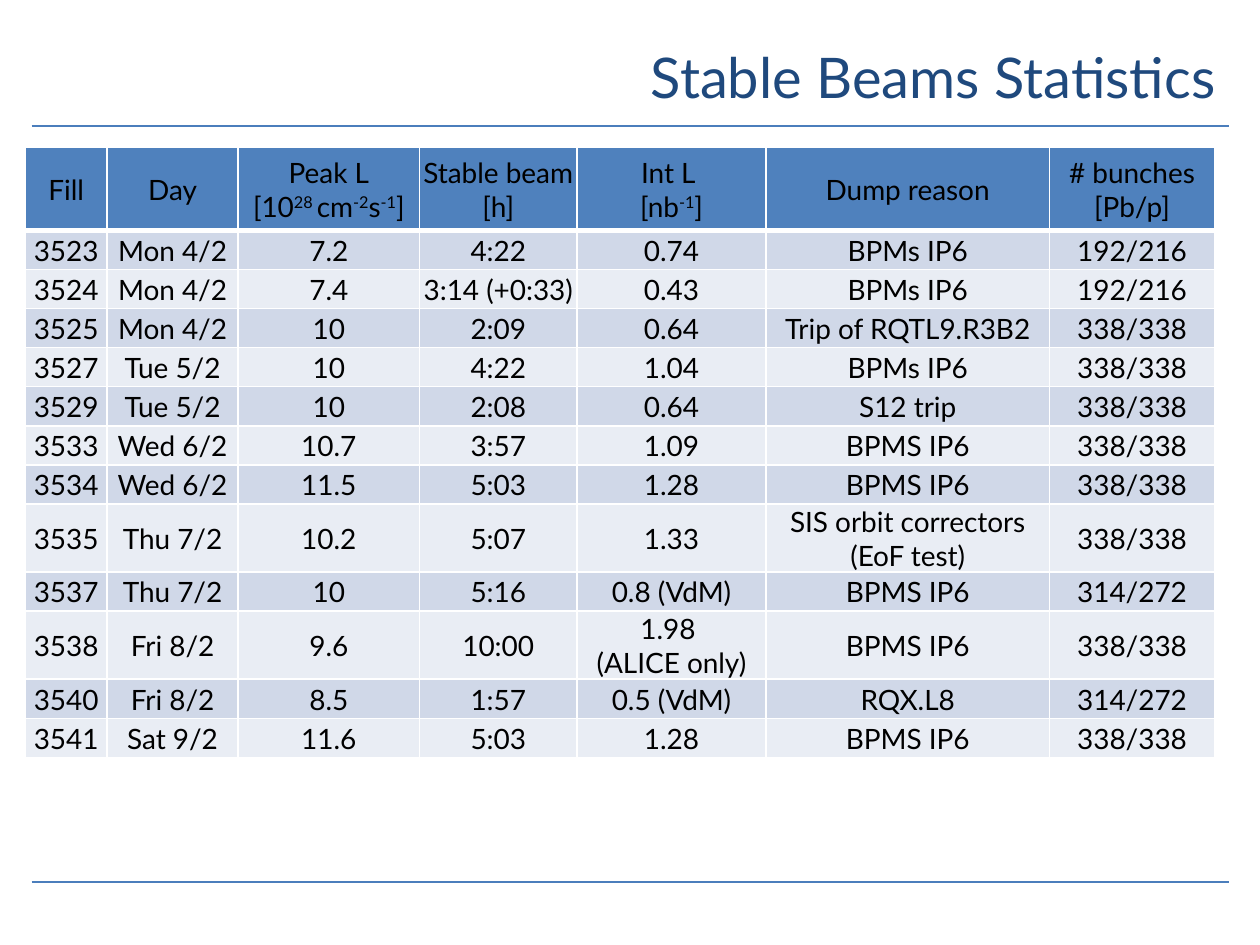
from lxml import etree
from pptx import Presentation
from pptx.dml.color import RGBColor
from pptx.enum.shapes import MSO_CONNECTOR as Connector
from pptx.enum.text import MSO_ANCHOR as Anchor, PP_ALIGN as Align
from pptx.oxml.ns import qn
from pptx.util import Inches, Pt

FONT = "Lato"
HEADER_FILL = "4F81BD"
BAND_FILLS = ["D0D8E8", "E9EDF4"]
COLUMN_WIDTHS = [0.65, 1.04, 1.44, 1.25, 1.5, 2.25, 1.31]
HEADER_HEIGHT, ROW_HEIGHT = 0.66, 0.31
SUPERSCRIPT_MARK = "^"

HEADERS = [
    "Fill", "Day", "Peak L\v[10^28 ^cm^-2^s^-1^]", "Stable beam [h]",
    "Int L \v[nb^-1^]", "Dump reason", "# bunches\n[Pb/p]",
]
FILLS = [
    ["3523", "Mon 4/2", "7.2", "4:22", "0.74", "BPMs IP6", "192/216"],
    ["3524", "Mon 4/2", "7.4", "3:14 (+0:33)", "0.43", "BPMs IP6", "192/216"],
    ["3525", "Mon 4/2", "10", "2:09", "0.64", "Trip of RQTL9.R3B2", "338/338"],
    ["3527", "Tue 5/2", "10", "4:22", "1.04", "BPMs IP6", "338/338"],
    ["3529", "Tue 5/2", "10", "2:08", "0.64", "S12 trip", "338/338"],
    ["3533", "Wed 6/2", "10.7", "3:57", "1.09", "BPMS IP6", "338/338"],
    ["3534", "Wed 6/2", "11.5", "5:03", "1.28", "BPMS IP6", "338/338"],
    ["3535", "Thu 7/2", "10.2", "5:07", "1.33", "SIS orbit correctors (EoF test)", "338/338"],
    ["3537", "Thu 7/2", "10", "5:16", "0.8 (VdM)", "BPMS IP6", "314/272"],
    ["3538", "Fri 8/2", "9.6", "10:00", "1.98 \n(ALICE only)", "BPMS IP6", "338/338"],
    ["3540", "Fri 8/2", "8.5", "1:57", "0.5 (VdM)", "RQX.L8", "314/272"],
    ["3541", "Sat 9/2", "11.6", "5:03", "1.28", "BPMS IP6", "338/338"],
]


def color(value):
    return RGBColor.from_string(value)


def format_span(span, size, shade):
    span.font.name = FONT
    span.font.size = Pt(size)
    span.font.bold = False
    span.font.color.rgb = color(shade)


def add_title(page, text):
    title = page.shapes.title
    title.left, title.top = Inches(1.75), Inches(0.17)
    title.width, title.height = Inches(8), Inches(0.87)
    title.text_frame.text = text
    title.text_frame.vertical_anchor = Anchor.MIDDLE
    para = title.text_frame.paragraphs[0]
    para.alignment = Align.RIGHT
    format_span(para.runs[0], 32, "1F497D")


def add_rule(page, top):
    rule = page.shapes.add_connector(
        Connector.STRAIGHT, Inches(0.25), Inches(top), Inches(9.75), Inches(top))
    rule.line.color.rgb = color("4B7EBC")
    rule.line.width = Pt(1.5)
    etree.SubElement(rule._element.spPr, qn("a:effectLst"))


def fill_paragraph(para, text):
    pieces = text.split(SUPERSCRIPT_MARK)
    para.text = pieces[0]
    para.alignment = Align.CENTER
    for index, piece in enumerate(pieces[1:], 1):
        span = para.add_run()
        span.text = piece
        if index % 2:
            span.font._element.set("baseline", "30000")
    for span in para.runs:
        format_span(span, 16, "000000")


def set_borders(cell, top, bottom):
    properties = cell._tc.get_or_add_tcPr()
    for side, width in [("L", 1), ("R", 1), ("T", top), ("B", bottom)]:
        border = etree.SubElement(properties, qn(f"a:ln{side}"), w=str(Pt(width)))
        fill = etree.SubElement(border, qn("a:solidFill"))
        etree.SubElement(fill, qn("a:srgbClr"), val="FFFFFF")


def fill_cell(cell, text, row):
    set_borders(cell, 3 if row == 1 else 1, 3 if row == 0 else 1)
    cell.fill.solid()
    cell.fill.fore_color.rgb = color(BAND_FILLS[(row - 1) % 2] if row else HEADER_FILL)
    cell.margin_left = cell.margin_top = cell.margin_right = Inches(0.01)
    cell.margin_bottom = 0
    cell.vertical_anchor = Anchor.MIDDLE
    frame = cell.text_frame
    for index, line in enumerate(text.split("\n")):
        fill_paragraph(frame.add_paragraph() if index else frame.paragraphs[0], line)


def add_statistics(page):
    rows = [HEADERS] + FILLS
    height = HEADER_HEIGHT + ROW_HEIGHT * len(FILLS)
    table = page.shapes.add_table(
        len(rows), len(HEADERS), Inches(0.2), Inches(1.17),
        Inches(sum(COLUMN_WIDTHS)), Inches(height)).table
    for column, width in zip(table.columns, COLUMN_WIDTHS):
        column.width = Inches(width)
    for row, texts in enumerate(rows):
        table.rows[row].height = Inches(ROW_HEIGHT if row else HEADER_HEIGHT)
        for column, text in enumerate(texts):
            fill_cell(table.cell(row, column), text, row)


def main():
    deck = Presentation()
    deck.slide_width, deck.slide_height = Inches(10), Inches(7.5)
    page = deck.slides.add_slide(deck.slide_layouts[5])
    for top in (1, 7):
        add_rule(page, top)
    add_title(page, "Stable Beams Statistics")
    add_statistics(page)
    deck.save("out.pptx")


if __name__ == "__main__":
    main()
